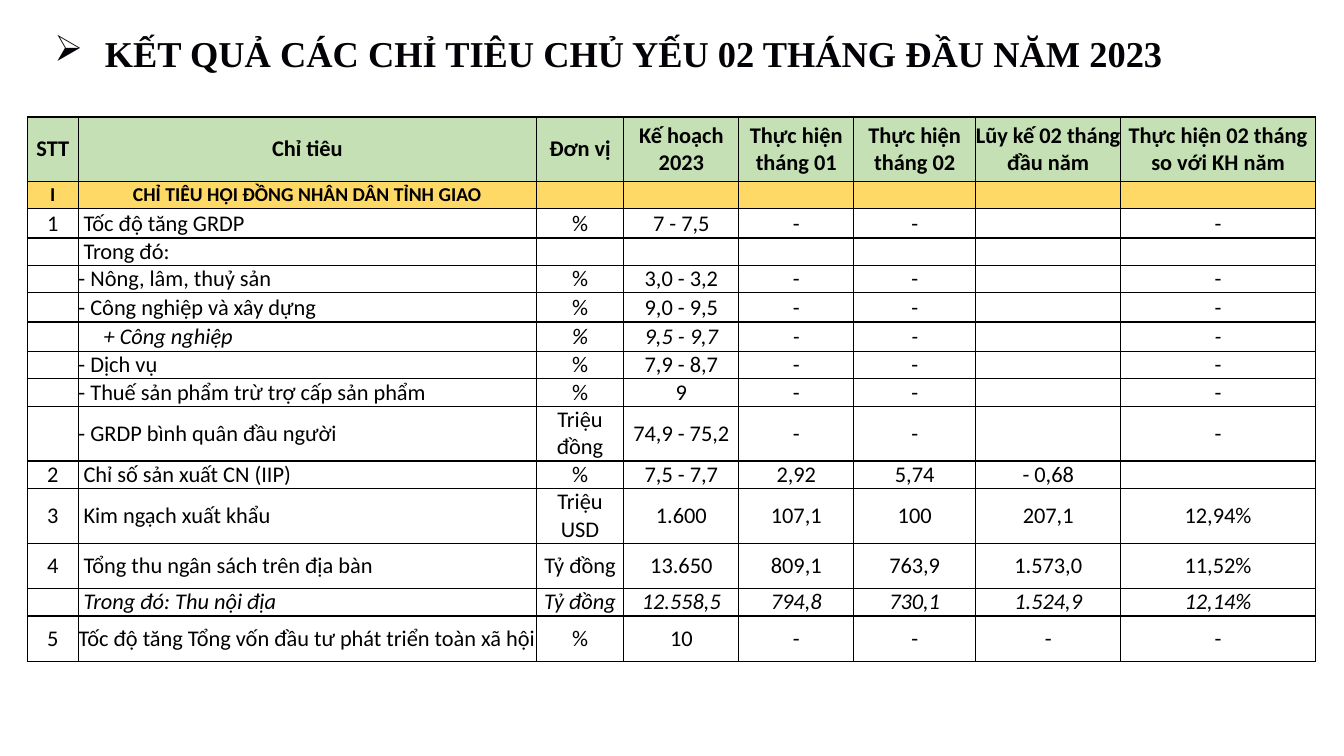
from pptx import Presentation
from pptx.dml.color import RGBColor
from pptx.enum.text import MSO_ANCHOR, MSO_AUTO_SIZE, PP_ALIGN
from pptx.oxml import parse_xml
from pptx.oxml.ns import nsdecls
from pptx.util import Pt

MIDDLE = MSO_ANCHOR.MIDDLE
LEFT, CENTER = PP_ALIGN.LEFT, PP_ALIGN.CENTER
NO_FIT = MSO_AUTO_SIZE.NONE
BLACK = RGBColor(0x00, 0x00, 0x00)
INK = RGBColor(0x04, 0x02, 0x06)
GREEN = RGBColor(0xC5, 0xE0, 0xB4)
GOLD = RGBColor(0xFF, 0xD9, 0x66)

COLS = [36.7, 327, 62.6, 82.1, 82.1, 87.1, 103.7, 138.9]

# Row height, left inset of the indicator name, cell texts
ROWS = [
    (46, 0, ["STT", "Chỉ tiêu", "Đơn vị", "Kế hoạch 2023", "Thực hiện tháng 01",
             "Thực hiện tháng 02", "Lũy kế 02 tháng đầu năm",
             "Thực hiện 02 tháng so với KH năm"]),
    (16.6, 0, ["I", "CHỈ TIÊU HỘI ĐỒNG NHÂN DÂN TỈNH GIAO", "", "", "", "", "", ""]),
    (20.9, 3.6, ["1", "Tốc độ tăng GRDP", "%", "7 - 7,5", "-", "-", "", "-"]),
    (16.6, 3.6, ["", "Trong đó:", "", "", "", "", "", ""]),
    (16.6, 0, ["", "- Nông, lâm, thuỷ sản", "%", "3,0 - 3,2", "-", "-", "", "-"]),
    (20.9, 0, ["", "- Công nghiệp và xây dựng", "%", "9,0 - 9,5", "-", "-", "", "-"]),
    (20.9, 18, ["", "+ Công nghiệp", "%", "9,5 - 9,7", "-", "-", "", "-"]),
    (16.6, 0, ["", "- Dịch vụ", "%", "7,9 - 8,7", "-", "-", "", "-"]),
    (16.6, 0, ["", "- Thuế sản phẩm trừ trợ cấp sản phẩm", "%", "9", "-", "-", "", "-"]),
    (24.5, 0, ["", "- GRDP bình quân đầu người", "Triệu đồng", "74,9 - 75,2",
               "-", "-", "", "-"]),
    (18.7, 3.6, ["2", "Chỉ số sản xuất CN (IIP)", "%", "7,5 - 7,7",
                 "2,92", "5,74", "- 0,68", ""]),
    (18, 3.6, ["3", "Kim ngạch xuất khẩu", "Triệu USD", "1.600",
               "107,1", "100", "207,1", "12,94%"]),
    (32.4, 3.6, ["4", "Tổng thu ngân sách trên địa bàn", "Tỷ đồng", "13.650",
                 "809,1", "763,9", "1.573,0", "11,52%"]),
    (16.6, 3.6, ["", "Trong đó: Thu nội địa", "Tỷ đồng", "12.558,5",
                 "794,8", "730,1", "1.524,9", "12,14%"]),
    (32.4, 0, ["5", "Tốc độ tăng Tổng vốn đầu tư phát triển toàn xã hội", "%", "10",
               "-", "-", "-", "-"]),
]
FILLS = {0: GREEN, 1: GOLD}
ITALIC = (6, 13)


def style(font, name, size, color, bold, italic=False):
    font.name, font.size, font.bold, font.italic = name, Pt(size), bold, italic
    font.color.rgb = color


def border(cell):
    props = cell._tc.get_or_add_tcPr()
    for side in ("lnL", "lnR", "lnT", "lnB"):
        props.append(parse_xml(
            f'<a:{side} {nsdecls("a")} w="12700"><a:solidFill>'
            f'<a:srgbClr val="{BLACK}"/></a:solidFill></a:{side}>'))


deck = Presentation()
deck.slide_width, deck.slide_height = Pt(960), Pt(540)
slide = deck.slides.add_slide(deck.slide_layouts[5])

# Title with arrow bullet
title = slide.shapes.title
title.left, title.top, title.width, title.height = Pt(31.7), Pt(18), Pt(920), Pt(39)
frame = title.text_frame
frame.word_wrap = True
frame.auto_size = NO_FIT
frame.vertical_anchor = MIDDLE
para = frame.paragraphs[0]
para.alignment = LEFT
props = para._p.get_or_add_pPr()
props.set("marL", str(Pt(36)))
props.set("indent", str(Pt(-36)))
props.append(parse_xml(f'<a:buChar {nsdecls("a")} char="➢"/>'))
run = para.add_run()
run.text = "KẾT QUẢ CÁC CHỈ TIÊU CHỦ YẾU 02 THÁNG ĐẦU NĂM 2023"
style(run.font, "Times New Roman", 26, INK, True)

# Indicator table
holder = slide.shapes.add_table(len(ROWS), len(COLS), Pt(19.4), Pt(83.5), Pt(920), Pt(384.5))
table = holder.table
table.first_row = table.horz_banding = False
for col, width in zip(table.columns, COLS):
    col.width = Pt(width)

for r, (height, inset, texts) in enumerate(ROWS):
    table.rows[r].height = Pt(height)
    for c, text in enumerate(texts):
        cell = table.cell(r, c)
        name = c == 1 and r > 1
        cell.margin_left = Pt(inset if name else 0)
        cell.margin_right = cell.margin_top = cell.margin_bottom = 0
        cell.vertical_anchor = MIDDLE
        border(cell)
        if r in FILLS:
            cell.fill.solid()
            cell.fill.fore_color.rgb = FILLS[r]
        else:
            cell.fill.background()
        para = cell.text_frame.paragraphs[0]
        para.alignment = LEFT if name else CENTER
        if text:
            run = para.add_run()
            run.text = text
            style(run.font, "Calibri", 14 if r == 1 else 16, BLACK, r in FILLS, r in ITALIC)
        else:
            end = parse_xml(f'<a:endParaRPr {nsdecls("a")} sz="1600"/>')
            para._p.append(end)
holder.height = Pt(384.5)

deck.save("out.pptx")
